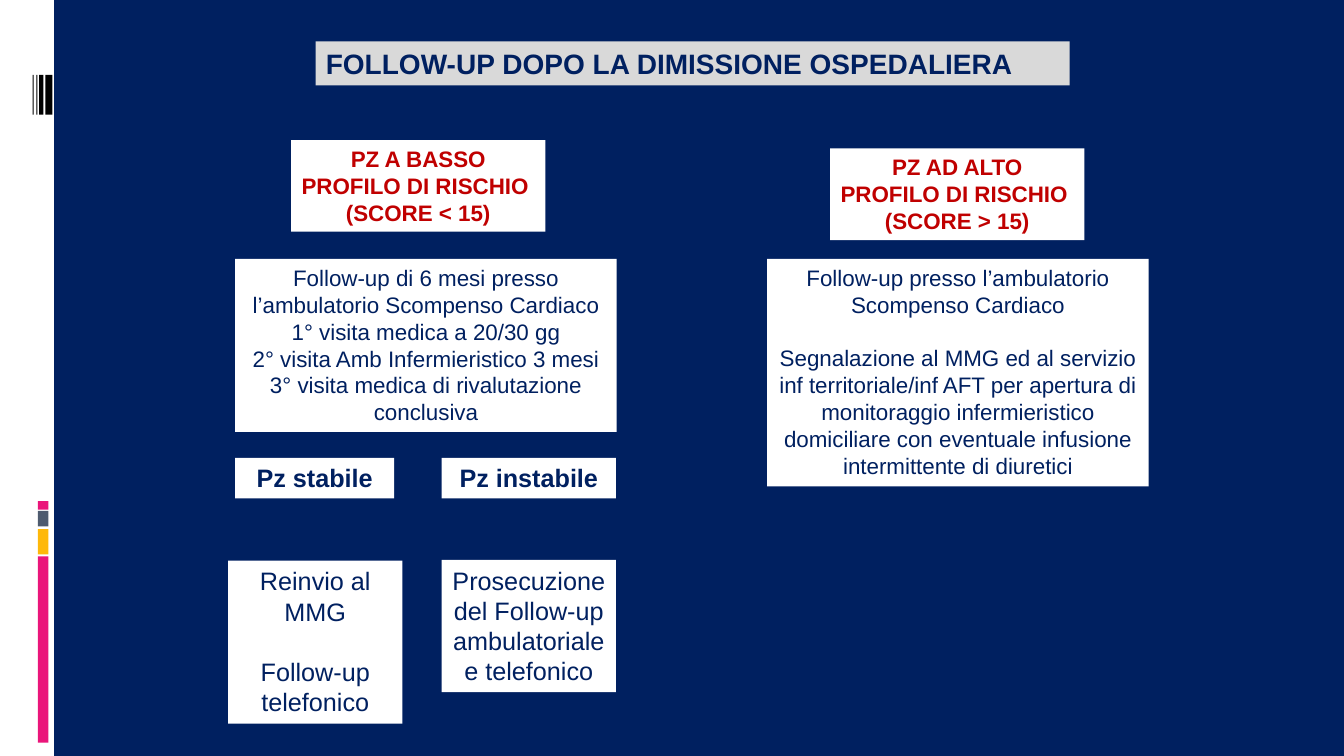
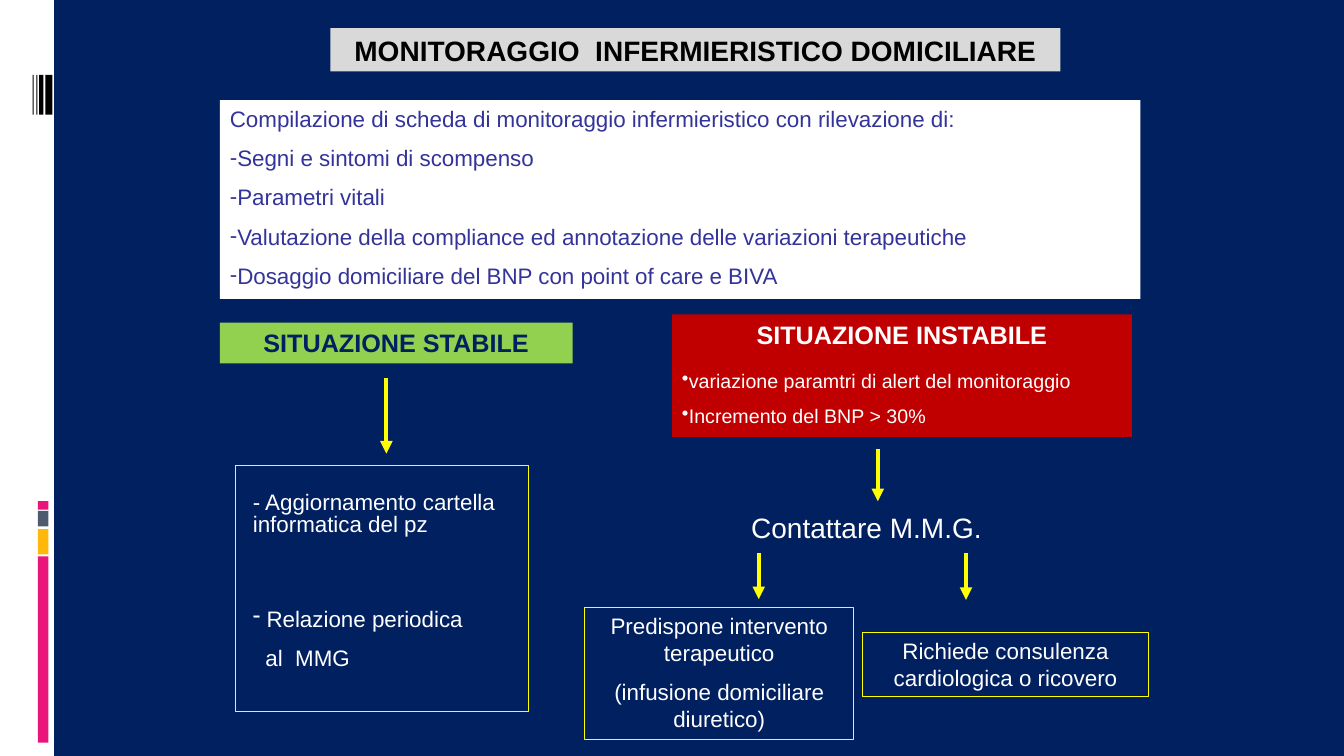
"""Builds two slides on follow-up after hospital discharge and home nursing monitoring."""
from lxml.etree import SubElement
from pptx import Presentation
from pptx.dml.color import RGBColor
from pptx.enum.shapes import MSO_CONNECTOR, MSO_SHAPE
from pptx.enum.text import MSO_ANCHOR, MSO_AUTO_SIZE, PP_ALIGN
from pptx.oxml.ns import qn
from pptx.util import Pt

NAVY = RGBColor(0x00, 0x20, 0x60)
WHITE = RGBColor(0xFF, 0xFF, 0xFF)
BLACK = RGBColor(0x00, 0x00, 0x00)
GREY = RGBColor(0xD9, 0xD9, 0xD9)
RED = RGBColor(0xC0, 0x00, 0x00)
GREEN = RGBColor(0x92, 0xD0, 0x50)
YELLOW = RGBColor(0xFF, 0xFF, 0x00)
INDIGO = RGBColor(0x33, 0x33, 0x99)
PINK = RGBColor(0xEA, 0x15, 0x7A)
AMBER = RGBColor(0xFE, 0xB8, 0x0A)
SLATE = RGBColor(0x4E, 0x5B, 0x6F)


def add_box(page, place, fill=None, line=None):
    box = page.shapes.add_shape(MSO_SHAPE.RECTANGLE, *map(Pt, place))
    box.shadow.inherit = False
    if fill is None:
        box.fill.background()
    else:
        box.fill.solid()
        box.fill.fore_color.rgb = fill
    if line is None:
        box.line.fill.background()
    else:
        box.line.color.rgb = line
        box.line.width = Pt(0.75)
    return box


def write(shape, lines, size=16, color=NAVY, bold=False, align=PP_ALIGN.CENTER,
          gap=0, after=0, spacing=1.0, bullet=None, indent=0):
    frame = shape.text_frame
    frame.word_wrap = True
    frame.auto_size = MSO_AUTO_SIZE.NONE
    frame.vertical_anchor = MSO_ANCHOR.TOP
    for line in lines:
        first = not frame.text
        para = frame.paragraphs[0] if first else frame.add_paragraph()
        para.alignment = align
        para.line_spacing = spacing
        para.space_before = Pt(0 if first else gap)
        para.space_after = Pt(after)
        span = para.add_run()
        span.text = line
        span.font.name = "Arial"
        span.font.size = Pt(size)
        span.font.bold = bold
        span.font.color.rgb = color
        properties = para._p.get_or_add_pPr()
        properties.set("marL", str(Pt(indent)))
        properties.set("indent", str(Pt(-indent if bullet else 0)))
        if bullet:
            SubElement(properties, qn("a:buChar")).set("char", bullet)
        else:
            SubElement(properties, qn("a:buNone"))


deck = Presentation()
deck.slide_width = Pt(960)
deck.slide_height = Pt(540)
layout = deck.slide_layouts[1]
layout.background.fill.solid()
layout.background.fill.fore_color.rgb = NAVY
for footer in list(layout.placeholders)[2:]:
    layout.shapes.element.remove(footer.element)

discharge_page = deck.slides.add_slide(layout)
monitoring_page = deck.slides.add_slide(layout)

side_bands = [((0, 0, 38.5, 540), WHITE)]
for top, height, color in [(397.5, 133, PINK), (378, 18, AMBER), (365, 11, SLATE), (358, 6, PINK)]:
    side_bands.append(((27, top, 7.5, height), color))
for left, width in [(32.5, 5), (28, 3), (26, 0.7), (23.3, 0.7)]:
    side_bands.append(((left, 53.5, width, 28.5), BLACK))
bands = [add_box(discharge_page, place, fill) for place, fill in side_bands]
for band in bands:
    layout.shapes.element.append(band.element)

for page, title_place, body_place, title, color, align in [
    (discharge_page, (225.5, 29.5, 538.5, 31.5), (168, 185, 272.5, 123.5),
     "FOLLOW-UP DOPO LA DIMISSIONE OSPEDALIERA", NAVY, PP_ALIGN.LEFT),
    (monitoring_page, (236, 20, 521.5, 31), (157, 71.5, 657.5, 142),
     "MONITORAGGIO  INFERMIERISTICO DOMICILIARE", BLACK, PP_ALIGN.CENTER),
]:
    for holder, place, fill in zip(page.placeholders, (title_place, body_place), (GREY, WHITE)):
        holder.left, holder.top, holder.width, holder.height = map(Pt, place)
        holder.fill.solid()
        holder.fill.fore_color.rgb = fill
    write(page.shapes.title, [title], size=20, color=color, bold=True, align=align)

write(discharge_page.placeholders[1], [
    "Follow-up di 6 mesi presso l’ambulatorio Scompenso Cardiaco",
    "1° visita medica a 20/30 gg",
    "2° visita Amb Infermieristico 3 mesi",
    "3° visita medica di rivalutazione conclusiva",
])

risk_style = {"color": RED, "bold": True}
state_style = {"size": 18, "bold": True}
for place, lines, style in [
    ((208, 100, 181.5, 65.5), ["PZ A BASSO PROFILO DI RISCHIO  (SCORE < 15)"], risk_style),
    ((593, 106, 181.5, 65.5), ["PZ AD ALTO PROFILO DI RISCHIO  (SCORE > 15)"], risk_style),
    ((168, 327, 113.5, 29), ["Pz stabile"], state_style),
    ((315.5, 327, 124.5, 29), ["Pz instabile"], state_style),
    ((548, 185, 272.5, 162.5), [
        "Follow-up presso l’ambulatorio Scompenso Cardiaco",
        "Segnalazione al MMG ed al servizio inf territoriale/inf AFT per apertura di "
        "monitoraggio infermieristico domiciliare con eventuale infusione intermittente di diuretici",
    ], {"gap": 19}),
    ((163, 400.5, 124.5, 116.5), ["Reinvio al MMG", "Follow-up telefonico"], {"size": 18, "gap": 21.5}),
    ((315.5, 400, 124.5, 94.5), ["Prosecuzione del Follow-up ambulatoriale e telefonico"], {"size": 18}),
]:
    write(add_box(discharge_page, place, WHITE), lines, **style)

checklist = monitoring_page.placeholders[1]
checklist_style = {"color": INDIGO, "align": PP_ALIGN.LEFT, "gap": 8.8}
write(checklist, ["Compilazione di scheda di monitoraggio infermieristico con rilevazione di:"], **checklist_style)
write(checklist, [
    "Segni e sintomi di scompenso",
    "Parametri vitali",
    "Valutazione della compliance ed annotazione delle variazioni terapeutiche",
    "Dosaggio domiciliare del BNP con point of care e BIVA",
], bullet="-", **checklist_style)

stable_box = add_box(monitoring_page, (157, 230.5, 252, 29), GREEN)
write(stable_box, ["SITUAZIONE STABILE"], size=18, bold=True)
unstable_box = add_box(monitoring_page, (480, 224.5, 328.5, 87.5), RED)
write(unstable_box, ["SITUAZIONE INSTABILE"], size=18, color=WHITE, bold=True, after=5.5)
write(unstable_box, ["variazione paramtri di alert del monitoraggio", "Incremento del BNP > 30%"],
      size=14, color=WHITE, align=PP_ALIGN.LEFT, gap=8.3, bullet="•")

add_box(monitoring_page, (168, 332.5, 209.5, 176), line=YELLOW)
update_text = monitoring_page.shapes.add_textbox(Pt(173.5), Pt(349), Pt(247.5), Pt(38))
write(update_text, ["- Aggiornamento cartella informatica del pz"],
      color=WHITE, align=PP_ALIGN.LEFT, spacing=0.8)
report_text = monitoring_page.shapes.add_textbox(Pt(173.5), Pt(428.5), Pt(221), Pt(55.5))
write(report_text, ["Relazione periodica"], color=WHITE, align=PP_ALIGN.LEFT, bullet="-", indent=9.8)
write(report_text, ["al  MMG"], color=WHITE, align=PP_ALIGN.LEFT, gap=8.8, indent=9)
contact_text = monitoring_page.shapes.add_textbox(Pt(520), Pt(361), Pt(198), Pt(31))
write(contact_text, ["Contattare M.M.G."], size=20, color=WHITE)

for place, lines in [
    ((417.5, 434, 192.5, 94.5), ["Predispone intervento terapeutico", "(infusione domiciliare diuretico)"]),
    ((616, 451.5, 204.5, 46), ["Richiede consulenza cardiologica o ricovero"]),
]:
    write(add_box(monitoring_page, place, line=YELLOW), lines, color=WHITE, gap=8.8)

for middle, top, bottom in [(276, 270, 324), (627, 321, 358), (542, 395, 428), (690, 395, 428.5)]:
    arrow = monitoring_page.shapes.add_connector(
        MSO_CONNECTOR.STRAIGHT, Pt(middle), Pt(top), Pt(middle), Pt(bottom))
    arrow.line.color.rgb = YELLOW
    arrow.line.width = Pt(3)
    properties = arrow.element.find(qn("p:spPr"))
    SubElement(properties.find(qn("a:ln")), qn("a:tailEnd")).set("type", "triangle")
    SubElement(properties, qn("a:effectLst"))

deck.save("out.pptx")
